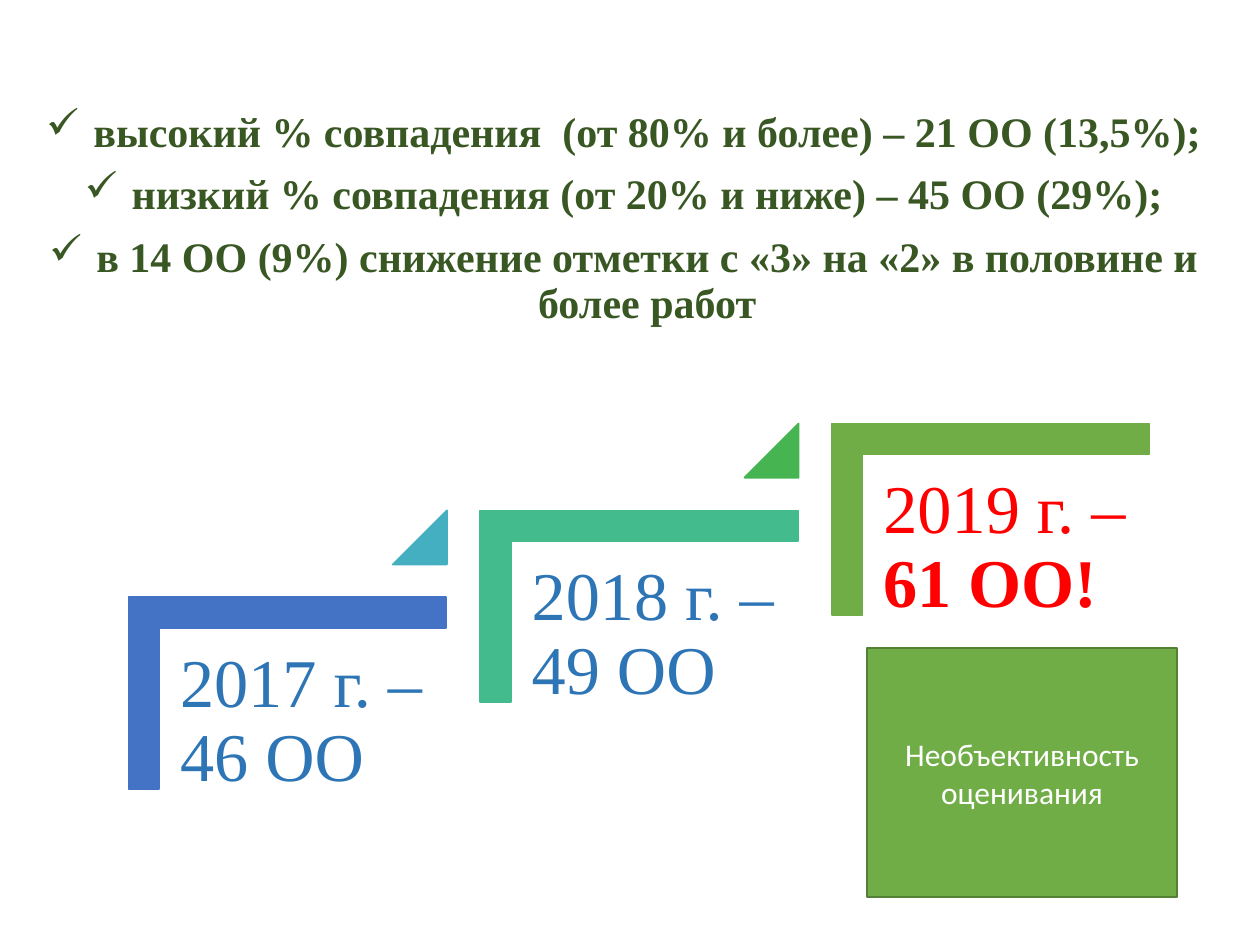
from lxml.etree import SubElement
from pptx import Presentation
from pptx.dml.color import RGBColor
from pptx.enum.shapes import MSO_SHAPE
from pptx.enum.text import MSO_ANCHOR, PP_ALIGN
from pptx.oxml.ns import qn
from pptx.util import Cm, Pt

COLORS = {
    "findings": "385723", "past": "2E75B6", "alert": "FF0000",
    "blue": "4472C4", "cyan": "43AFC0", "teal": "43BB8D",
    "emerald": "45B451", "green": "70AD47", "border": "538035",
    "white": "FFFFFF",
}
SERIF = "Times New Roman"
FINDINGS = [
    "высокий % совпадения  (от 80% и более) – 21 ОО (13,5%);",
    "низкий % совпадения (от 20% и ниже) – 45 ОО (29%);",
    "в 14 ОО (9%) снижение отметки с «3» на «2» в половине и более работ",
]
STEPS = [
    {"spans": [("2017 г. – 46 ОО", False)], "text": "past", "corner": "blue", "triangle": "cyan"},
    {"spans": [("2018 г. – 49 ОО", False)], "text": "past", "corner": "teal", "triangle": "emerald"},
    {"spans": [("2019 г. – ", False), ("61 ОО!", True)], "text": "alert", "corner": "green", "triangle": None},
]
CONCLUSION = "Необъективность оценивания"
STEP_RIGHT, STEP_UP = 7.09, 1.75


def color(name):
    return RGBColor.from_string(COLORS[name])


def add_span(paragraph, text, size, tint, font=SERIF, bold=False):
    span = paragraph.add_run()
    span.text = text
    span.font.size = Pt(size)
    span.font.name = font
    span.font.bold = bold
    span.font.color.rgb = color(tint)


def add_figure(page, kind, place, fill, line=None):
    figure = page.shapes.add_shape(kind, *map(Cm, place))
    figure.shadow.inherit = False
    figure.fill.solid()
    figure.fill.fore_color.rgb = color(fill)
    figure.line.color.rgb = color(line or fill)
    figure.line.width = Pt(1)
    return figure


def add_text_box(page, place, margin=None):
    box = page.shapes.add_textbox(*map(Cm, place))
    frame = box.text_frame
    frame.word_wrap = True
    if margin is not None:
        frame.margin_left = frame.margin_right = Cm(margin)
        frame.margin_top = frame.margin_bottom = Cm(margin)
    return frame


def add_findings(page):
    frame = add_text_box(page, (0.43, 2.11, 24.28, 15.75))
    for index, text in enumerate(FINDINGS):
        paragraph = frame.add_paragraph() if index else frame.paragraphs[0]
        properties = paragraph._p.get_or_add_pPr()
        properties.set("marL", str(Cm(0.95)))
        properties.set("indent", str(Cm(-0.95)))
        SubElement(properties, qn("a:buChar")).set("char", "✓")
        paragraph.alignment = PP_ALIGN.CENTER
        paragraph.line_spacing = 0.9
        if index:
            paragraph.space_before = Pt(10)
        add_span(paragraph, text, 24, "findings", bold=True)


def add_step(page, index, step):
    right, up = index * STEP_RIGHT, index * STEP_UP
    corner = add_figure(page, MSO_SHAPE.CORNER,
                        (3.86 + right, 10.77 - up, 3.86, 6.4), step["corner"])
    corner.rotation = 90
    corner.adjustments[0] = corner.adjustments[1] = 0.16
    frame = add_text_box(page, (3.23 + right, 12.67 - up, 5.79, 5.08), 0.4)
    paragraph = frame.paragraphs[0]
    paragraph.line_spacing = 0.9
    for text, bold in step["spans"]:
        add_span(paragraph, text, 39, step["text"], bold=bold)
    if step["triangle"]:
        triangle = add_figure(page, MSO_SHAPE.ISOSCELES_TRIANGLE,
                              (7.92 + right, 10.29 - up, 1.09, 1.09), step["triangle"])
        triangle.adjustments[0] = 1


def add_conclusion(page):
    square = add_figure(page, MSO_SHAPE.RECTANGLE, (17.48, 13.06, 6.25, 5.03), "green", "border")
    frame = square.text_frame
    frame.word_wrap = True
    frame.vertical_anchor = MSO_ANCHOR.MIDDLE
    paragraph = frame.paragraphs[0]
    paragraph.alignment = PP_ALIGN.CENTER
    add_span(paragraph, CONCLUSION, 18, "white", "Calibri")


def main():
    deck = Presentation()
    deck.slide_width, deck.slide_height = Cm(25.4), Cm(19.05)
    page = deck.slides.add_slide(deck.slide_layouts[6])
    add_findings(page)
    for index, step in enumerate(STEPS):
        add_step(page, index, step)
    add_conclusion(page)
    deck.save("out.pptx")


if __name__ == "__main__":
    main()
